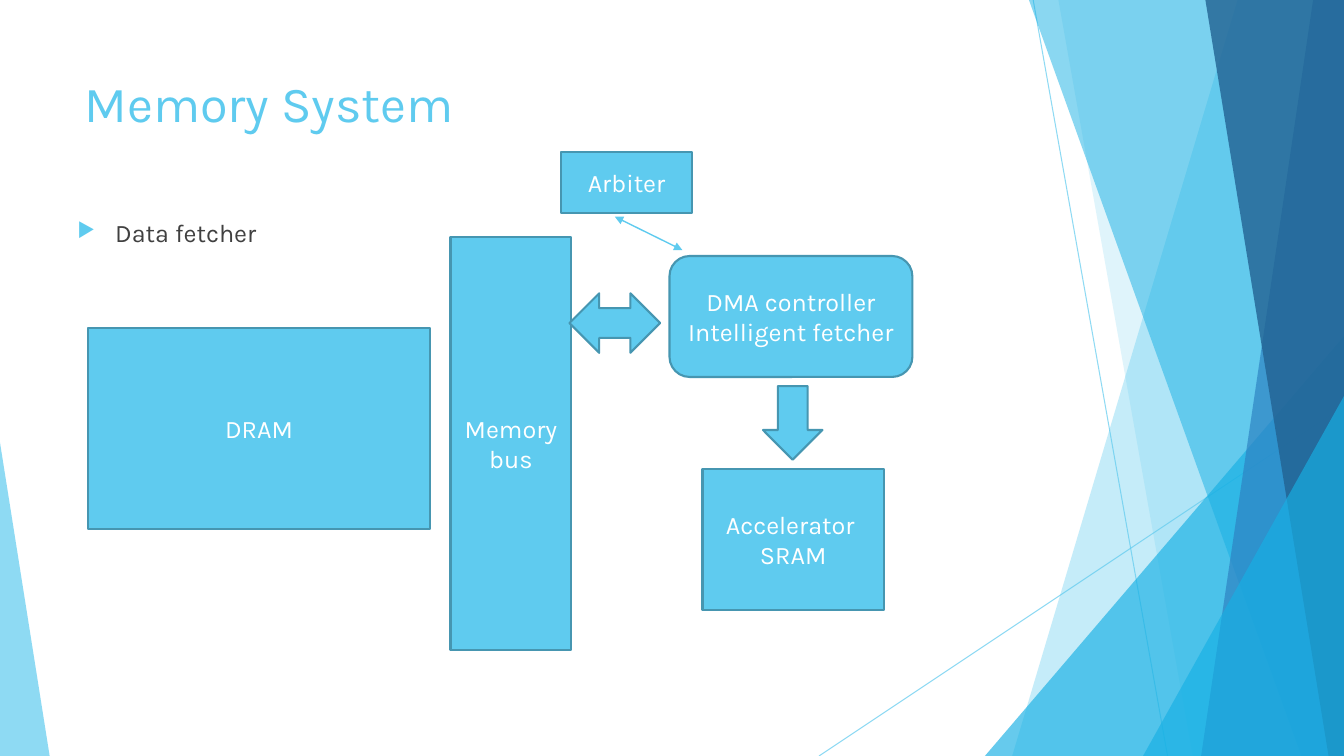
from pptx import Presentation
from pptx.dml.color import RGBColor
from pptx.enum.shapes import MSO_CONNECTOR, MSO_SHAPE
from pptx.enum.text import MSO_ANCHOR, PP_ALIGN
from pptx.oxml.ns import qn
from pptx.util import Pt
from lxml import etree

SKY = RGBColor(0x5F, 0xCB, 0xEF)
CYAN = RGBColor(0x17, 0xB0, 0xE4)
BLUE = RGBColor(0x2E, 0x83, 0xC3)
NAVY = RGBColor(0x22, 0x62, 0x92)
OUTLINE = RGBColor(0x46, 0x96, 0xB1)
WHITE = RGBColor(0xFF, 0xFF, 0xFF)
CHARCOAL = RGBColor(0x40, 0x40, 0x40)

RECT = MSO_SHAPE.RECTANGLE
ROUNDED = MSO_SHAPE.ROUNDED_RECTANGLE
TRIANGLE = MSO_SHAPE.ISOSCELES_TRIANGLE
DOWN_ARROW = MSO_SHAPE.DOWN_ARROW
TWO_WAY_ARROW = MSO_SHAPE.LEFT_RIGHT_ARROW
STRAIGHT = MSO_CONNECTOR.STRAIGHT
TOP, MIDDLE = MSO_ANCHOR.TOP, MSO_ANCHOR.MIDDLE
LEFT, CENTER = PP_ALIGN.LEFT, PP_ALIGN.CENTER

FONT = "Karla"
SLIDE_W, SLIDE_H = 960, 540


def set_alpha(fill_parent, percent):
    color = fill_parent.find(".//" + qn("a:srgbClr"))
    etree.SubElement(color, qn("a:alpha"), val=str(percent * 1000))


def paint_facet(facet, color, opacity):
    facet.shadow.inherit = False
    facet.fill.solid()
    facet.fill.fore_color.rgb = color
    facet.line.fill.background()
    set_alpha(facet._element.spPr, opacity)


def add_line(slide, start, end, width, opacity=100, arrowheads=False):
    line = slide.shapes.add_connector(STRAIGHT, *(Pt(v) for v in start + end))
    line.line.color.rgb = SKY
    line.line.width = Pt(width)
    outline = line.line._get_or_add_ln()
    if opacity < 100:
        set_alpha(outline, opacity)
    if arrowheads:
        for end_tag in ("a:headEnd", "a:tailEnd"):
            etree.SubElement(outline, qn(end_tag), type="triangle")
    etree.SubElement(line._element.spPr, qn("a:effectLst"))


def write_text(shape, lines, size, color, align, anchor):
    frame = shape.text_frame
    for name, value in {"word_wrap": True, "vertical_anchor": anchor}.items():
        setattr(frame, name, value)
    frame.text = "\n".join(lines)
    font_format = {"name": FONT, "size": Pt(size)}
    for paragraph in frame.paragraphs:
        paragraph.alignment = align
        font = paragraph.runs[0].font
        for name, value in font_format.items():
            setattr(font, name, value)
        font.color.rgb = color
    return frame


def add_triangle(slide, left, top, width, height, apex, color, opacity):
    triangle = slide.shapes.add_shape(
        TRIANGLE, Pt(left), Pt(top), Pt(width), Pt(height))
    triangle.adjustments[0] = apex
    paint_facet(triangle, color, opacity)


def add_facets(slide, left, top, width, height):
    """Layered translucent shards against the right edge, one at the left."""
    right, bottom = left + width, top + height

    def shard(top_x, bottom_x, color, opacity):
        corners = [(top_x, top), (right, top), (right, bottom), (bottom_x, bottom)]
        corners = [(Pt(left + x) if x < right else Pt(right), Pt(y))
                   for x, y in corners]
        builder = slide.shapes.build_freeform(*corners[0], scale=1.0)
        builder.add_line_segments(corners[1:], close=True)
        paint_facet(builder.convert_to_shape(), color, opacity)

    def right_corner(triangle_w, triangle_h):
        add_triangle(slide, right - triangle_w, bottom - triangle_h,
                     triangle_w, triangle_h, 1, CYAN, 66)

    add_line(slide, (left + 738, top), (left + 834, bottom), 0.75, 70)
    add_line(slide, (right, top + 290), (left + 585, bottom), 0.75, 70)
    shard(884, 723, SKY, 36)
    shard(756, 852, SKY, 20)
    right_corner(256.5, 300)
    shard(735, 929.5, CYAN, 50)
    shard(938, 858, BLUE, 70)
    shard(861, 949, NAVY, 80)
    right_corner(143.5, 257)
    add_triangle(slide, left, bottom - 224, 35.5, 224, 0, SKY, 70)


def add_title(slide, left, top, width, height):
    title = slide.shapes.add_textbox(Pt(left), Pt(top), Pt(width), Pt(height))
    write_text(title, ["Memory System"], 36, SKY, LEFT, TOP)


def add_bullets(slide, left, top, width, height):
    body = slide.shapes.add_textbox(Pt(left), Pt(top), Pt(width), Pt(height))
    frame = write_text(body, ["Data fetcher"], 18, CHARCOAL, LEFT, TOP)
    for paragraph in frame.paragraphs:
        paragraph.space_before = Pt(10)
        props = paragraph._p.get_or_add_pPr()
        props.set("marL", str(Pt(27)))
        props.set("indent", str(-Pt(27)))
        bullet_color = etree.SubElement(props, qn("a:buClr"))
        etree.SubElement(bullet_color, qn("a:srgbClr"), val=str(SKY))
        etree.SubElement(props, qn("a:buSzPct"), val="80000")
        etree.SubElement(props, qn("a:buChar"), char="▶")


def add_memory_diagram(slide, left, top):
    """Blocks and arrows, listed as offsets from the diagram's corner."""
    blocks = [
        (RECT, 0.6, 126, 244.8, 144, ["DRAM"]),
        (RECT, 259.8, 61.2, 86.4, 295.2, ["Memory", "bus"]),
        (RECT, 439.8, 226.8, 129.6, 100.8, ["Accelerator ", "SRAM"]),
        (ROUNDED, 416.2, 74.9, 173.5, 86.4,
         ["DMA controller", "Intelligent fetcher"]),
        (DOWN_ARROW, 483, 167.8, 42.5, 52.6, []),
        (TWO_WAY_ARROW, 344.8, 101.5, 64.8, 42.5, []),
        (RECT, 338.8, 0.7, 93.6, 43.2, ["Arbiter"]),
    ]
    for kind, x, y, width, height, label in blocks:
        block = slide.shapes.add_shape(
            kind, Pt(left + x), Pt(top + y), Pt(width), Pt(height))
        block.shadow.inherit = False
        block.fill.solid()
        block.fill.fore_color.rgb = SKY
        block.line.color.rgb = OUTLINE
        block.line.width = Pt(1.5)
        if label:
            write_text(block, label, 18, WHITE, CENTER, MIDDLE)
    add_line(slide, (left + 377.2, top + 46.8), (left + 425.4, top + 70.6),
             1, arrowheads=True)


def main():
    deck = Presentation()
    deck.slide_width, deck.slide_height = Pt(SLIDE_W), Pt(SLIDE_H)
    slide = deck.slides.add_slide(deck.slide_layouts[6])
    add_facets(slide, 0, 0, SLIDE_W, SLIDE_H)
    add_title(slide, 53.3, 48, 677, 104)
    add_bullets(slide, 48.2, 152, 677, 305)
    add_memory_diagram(slide, 62, 108)
    deck.save("out.pptx")


if __name__ == "__main__":
    main()
